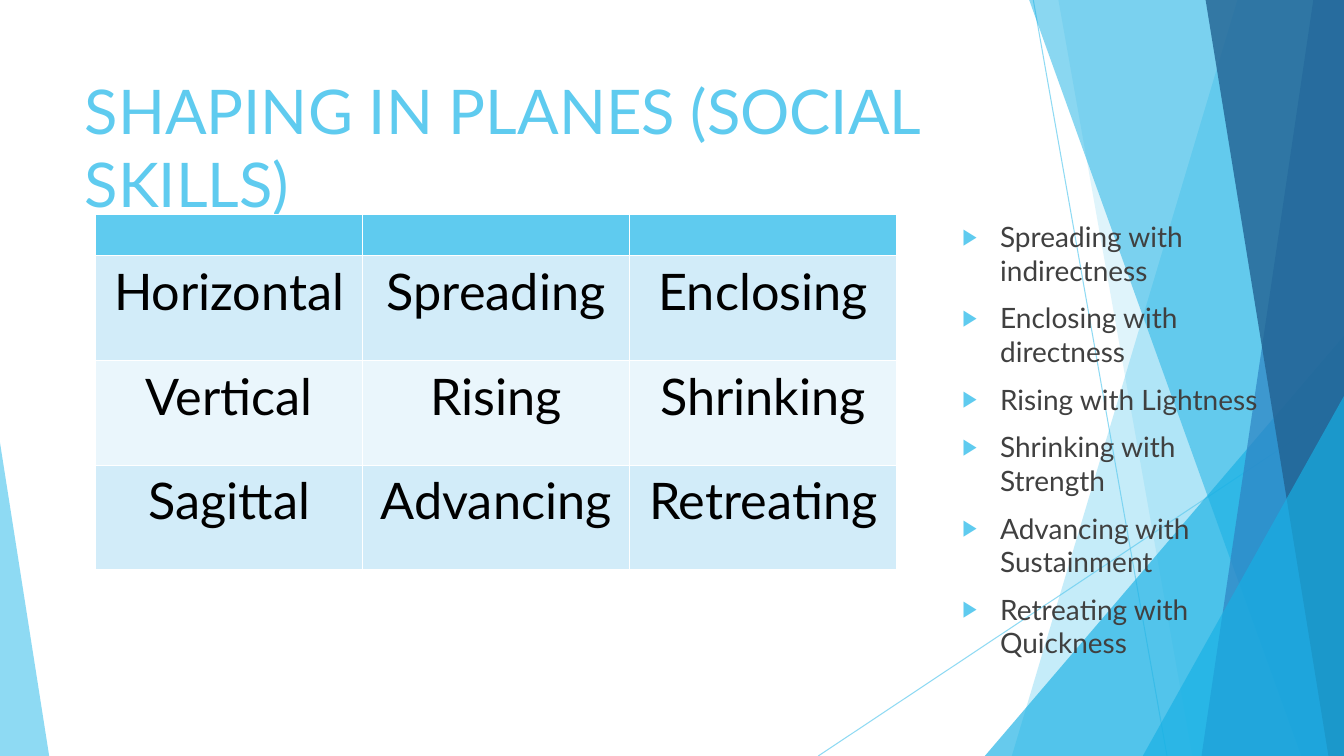
from lxml.etree import SubElement
from pptx import Presentation
from pptx.dml.color import RGBColor
from pptx.enum.shapes import MSO_CONNECTOR, MSO_SHAPE
from pptx.enum.text import MSO_ANCHOR, MSO_AUTO_SIZE, PP_ALIGN
from pptx.oxml.ns import qn
from pptx.util import Cm, Pt

SKY = RGBColor(0x5F, 0xCB, 0xEF)
CYAN = RGBColor(0x17, 0xB0, 0xE4)
BLUE = RGBColor(0x2E, 0x83, 0xC3)
NAVY = RGBColor(0x22, 0x62, 0x92)
ROW_TINTS = [RGBColor(0xD2, 0xEC, 0xF9), RGBColor(0xEA, 0xF6, 0xFC)]
BLACK = RGBColor(0, 0, 0)
GREY = RGBColor(0x40, 0x40, 0x40)
FONT = "Lato"

TITLE = "SHAPING IN PLANES (SOCIAL SKILLS)"
PLANES = [
    ("Horizontal", "Spreading", "Enclosing"),
    ("Vertical", "Rising", "Shrinking"),
    ("Sagittal", "Advancing", "Retreating"),
]
AFFINITIES = [
    "Spreading with indirectness",
    "Enclosing with directness",
    "Rising with Lightness",
    "Shrinking with Strength",
    "Advancing with Sustainment",
    "Retreating with Quickness",
]

WIDTH, HEIGHT, BAND_TOP = 33.87, 19.05, -0.02
RAYS = [(26.04, 0, 29.41, HEIGHT), (WIDTH, 10.24, 20.62, HEIGHT)]
# Bands give top-left and bottom-left x; triangles give left, top, width and apex.
FACETS = [
    ("band", (31.19, 25.5), SKY, 36),
    ("band", (26.67, 30.05), SKY, 20),
    ("triangle", (24.82, 8.46, 9.05, 1), CYAN, 66),
    ("band", (25.93, 32.79), CYAN, 50),
    ("band", (33.1, 30.28), BLUE, 70),
    ("band", (30.38, 33.48), NAVY, 80),
    ("triangle", (28.8, 9.98, 5.07, 1), CYAN, 66),
    ("triangle", (0, 11.15, 1.24, 0), SKY, 70),
]
HEADER_HEIGHT, ROW_HEIGHT, COLUMN_WIDTH = 1.02, 2.64, 6.73


def set_opacity(shape, percent):
    """Make every colour of the shape partly transparent."""
    for colour in shape._element.spPr.iter(qn("a:srgbClr")):
        SubElement(colour, qn("a:alpha"), val=str(percent * 1000))


def add_ray(shapes, ends):
    """Draw one thin background line."""
    ray = shapes.add_connector(MSO_CONNECTOR.STRAIGHT, *map(Cm, ends))
    ray.line.color.rgb = SKY
    ray.line.width = Pt(0.75)
    set_opacity(ray, 70)
    SubElement(ray._element.spPr, qn("a:effectLst"))


def add_facet(shapes, kind, geometry, colour, opacity):
    """Draw one translucent background facet."""
    if kind == "band":
        top_left, bottom_left = geometry
        outline = shapes.build_freeform(Cm(top_left), Cm(BAND_TOP))
        corners = [(WIDTH, BAND_TOP), (WIDTH, HEIGHT), (bottom_left, HEIGHT)]
        outline.add_line_segments([(Cm(x), Cm(y)) for x, y in corners])
        facet = outline.convert_to_shape()
    else:
        left, top, width, apex = geometry
        facet = shapes.add_shape(MSO_SHAPE.ISOSCELES_TRIANGLE, Cm(left), Cm(top),
                                 Cm(width), Cm(HEIGHT - top))
        facet.adjustments[0] = apex
    facet.shadow.inherit = False
    facet.fill.solid()
    facet.fill.fore_color.rgb = colour
    facet.line.fill.background()
    set_opacity(facet, opacity)


def style_runs(paragraph, size, colour):
    """Format all runs of a paragraph."""
    for run in paragraph.runs:
        run.font.name = FONT
        run.font.size = Pt(size)
        run.font.color.rgb = colour


def place(placeholder, left, top, width, height):
    """Move a placeholder in front of the background and anchor its text at the top."""
    placeholder.left, placeholder.top = Cm(left), Cm(top)
    placeholder.width, placeholder.height = Cm(width), Cm(height)
    frame = placeholder.text_frame
    frame.word_wrap = True
    frame.auto_size = MSO_AUTO_SIZE.NONE
    frame.vertical_anchor = MSO_ANCHOR.TOP
    tree = placeholder._element.getparent()
    tree.append(placeholder._element)


def add_planes(shapes):
    """Add the table of planes and their shaping qualities."""
    table = shapes.add_table(len(PLANES) + 1, 3, Cm(2.41), Cm(5.41), Cm(3 * COLUMN_WIDTH),
                             Cm(HEADER_HEIGHT + len(PLANES) * ROW_HEIGHT)).table
    for column in table.columns:
        column.width = Cm(COLUMN_WIDTH)
    table.rows[0].height = Cm(HEADER_HEIGHT)
    for header in table.rows[0].cells:
        header.fill.solid()
        header.fill.fore_color.rgb = SKY
    for index, qualities in enumerate(PLANES):
        row = table.rows[index + 1]
        row.height = Cm(ROW_HEIGHT)
        for cell, quality in zip(row.cells, qualities):
            cell.fill.solid()
            cell.fill.fore_color.rgb = ROW_TINTS[index % 2]
            paragraph = cell.text_frame.paragraphs[0]
            paragraph.text = quality
            paragraph.alignment = PP_ALIGN.CENTER
            style_runs(paragraph, 36, BLACK)


def add_bullet(paragraph):
    """Give a paragraph a hanging triangle bullet."""
    paragraph.space_before = Pt(10)
    properties = paragraph._p.get_or_add_pPr()
    properties.set("marL", str(Cm(0.95)))
    properties.set("indent", str(-Cm(0.95)))
    bullet_colour = SubElement(properties, qn("a:buClr"))
    SubElement(bullet_colour, qn("a:srgbClr"), val=str(SKY))
    SubElement(properties, qn("a:buSzPct"), val="80000")
    SubElement(properties, qn("a:buChar"), char="▶")


def main():
    """Build the slide and save it."""
    presentation = Presentation()
    presentation.slide_width, presentation.slide_height = Cm(WIDTH), Cm(HEIGHT)
    slide = presentation.slides.add_slide(presentation.slide_layouts[1])
    for ends in RAYS:
        add_ray(slide.shapes, ends)
    for facet in FACETS:
        add_facet(slide.shapes, *facet)

    title, affinities = slide.shapes.title, slide.placeholders[1]
    place(title, 1.88, 1.7, 26.92, 3.66)
    title.text_frame.text = TITLE
    heading = title.text_frame.paragraphs[0]
    heading.alignment = PP_ALIGN.LEFT
    style_runs(heading, 44, SKY)

    add_planes(slide.shapes)

    place(affinities, 24, 5.41, 8.43, 10.77)
    affinities.text_frame.text = "\n".join(AFFINITIES)
    for paragraph in affinities.text_frame.paragraphs:
        add_bullet(paragraph)
        style_runs(paragraph, 20, GREY)
    presentation.save("out.pptx")


if __name__ == "__main__":
    main()
